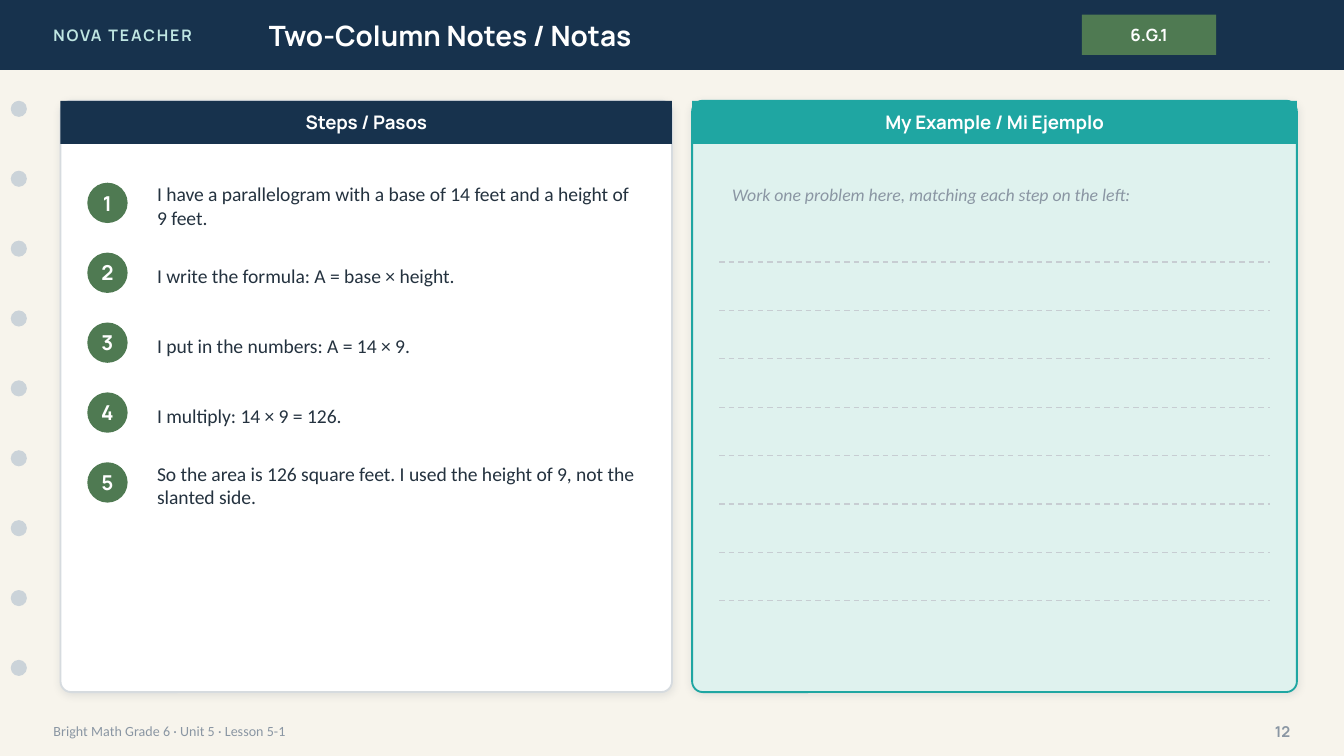
"""Build a two-column notes slide with worked steps and a space for an example."""
from lxml.etree import SubElement
from pptx import Presentation
from pptx.dml.color import RGBColor
from pptx.enum.dml import MSO_LINE_DASH_STYLE as Dash
from pptx.enum.shapes import MSO_CONNECTOR as Connector, MSO_SHAPE as Shape
from pptx.enum.text import MSO_ANCHOR as Anchor, MSO_AUTO_SIZE as AutoSize, PP_ALIGN as Align
from pptx.oxml.ns import qn
from pptx.util import Pt

CREAM = RGBColor(0xF7, 0xF4, 0xEC)
NAVY = RGBColor(0x17, 0x32, 0x4D)
MINT = RGBColor(0xBF, 0xE6, 0xE2)
WHITE = RGBColor(0xFF, 0xFF, 0xFF)
GREEN = RGBColor(0x4F, 0x7A, 0x52)
HOLE = RGBColor(0xCB, 0xD3, 0xD9)
GRAY = RGBColor(0x8A, 0x96, 0xA3)
INK = RGBColor(0x24, 0x32, 0x3F)
BORDER = RGBColor(0xD6, 0xDB, 0xDF)
TEAL = RGBColor(0x1F, 0xA6, 0xA2)
PALE_TEAL = RGBColor(0xDF, 0xF2, 0xEE)
RULE = RGBColor(0xC7, 0xCD, 0xD2)
SHADOW = RGBColor(0x1C, 0x2E, 0x42)

HEADING, BODY = "Manrope", "Calibri"
BAR_HEIGHT = 37.44
ROW_PITCH = 37.44
RULE_PITCH = 25.92
CARD_TOP, CARD_HEIGHT, HEADER_HEIGHT = 54, 316.8, 23.04
STEPS = (
    "I have a parallelogram with a base of 14 feet and a height of 9 feet.",
    "I write the formula: A = base × height.",
    "I put in the numbers: A = 14 × 9.",
    "I multiply: 14 × 9 = 126.",
    "So the area is 126 square feet. I used the height of 9, not the slanted side.",
)


def write(box, text, size, color, name=HEADING, bold=False, italic=False,
          align=Align.LEFT, spacing=0):
    """Put formatted text, centred vertically, into a shape."""
    frame = box.text_frame
    frame.word_wrap = True
    frame.auto_size = AutoSize.NONE
    frame.vertical_anchor = Anchor.MIDDLE
    para = frame.paragraphs[0]
    para.alignment = align
    span = para.add_run()
    span.text = text
    font = span.font
    font.name, font.size, font.bold, font.italic = name, Pt(size), bold, italic
    font.color.rgb = color
    if spacing:
        box.element.find(f".//{qn('a:rPr')}").set("spc", str(spacing * 100))


class NotesPage:
    """Hold the current slide and draw its elements in one style."""

    def __init__(self, deck):
        self.page = deck.slides.add_slide(deck.slide_layouts[5])
        self.page.background.fill.solid()
        self.page.background.fill.fore_color.rgb = CREAM

    def shape(self, kind, left, top, width, height, fill, line=None):
        shape = self.page.shapes.add_shape(kind, Pt(left), Pt(top), Pt(width), Pt(height))
        shape.shadow.inherit = False
        shape.fill.solid()
        shape.fill.fore_color.rgb = fill
        if line is None:
            shape.line.fill.background()
        else:
            shape.line.color.rgb = line
            shape.line.width = Pt(1)
        return shape

    def text(self, left, top, width, height, text, **style):
        box = self.page.shapes.add_textbox(Pt(left), Pt(top), Pt(width), Pt(height))
        write(box, text, **style)

    def title(self, left, top, width, height, text, **style):
        title = self.page.shapes.title
        title.left, title.top, title.width, title.height = map(Pt, (left, top, width, height))
        write(title, text, **style)
        return title

    def label(self, left, top, width, height, fill, text, size):
        label = self.shape(Shape.RECTANGLE, left, top, width, height, fill)
        write(label, text, size=size, color=WHITE, bold=True, align=Align.CENTER)

    def card(self, left, width, fill, line, header_fill, header):
        card = self.shape(Shape.ROUNDED_RECTANGLE, left, CARD_TOP, width, CARD_HEIGHT, fill, line)
        card.adjustments[0] = 0.018
        effects = card.element.spPr.find(qn("a:effectLst"))
        shadow = SubElement(effects, qn("a:outerShdw"), blurRad=str(Pt(4)), dist=str(Pt(1)),
                            dir="5400000", algn="bl", rotWithShape="0")
        color = SubElement(shadow, qn("a:srgbClr"), val=str(SHADOW))
        SubElement(color, qn("a:alpha"), val="10000")
        self.label(left, CARD_TOP, width, HEADER_HEIGHT, header_fill, header, 10)

    def step(self, number, text):
        top = 93.6 + (number - 1) * ROW_PITCH
        badge = self.shape(Shape.OVAL, 46.8, top + 4.32, 21.6, 21.6, GREEN)
        write(badge, str(number), size=11, color=WHITE, bold=True, align=Align.CENTER)
        frame = badge.text_frame
        frame.margin_left = frame.margin_right = frame.margin_top = frame.margin_bottom = 0
        self.text(77.04, top, 272.16, 33.12, text, size=10.5, color=INK, name=BODY)

    def writing_line(self, left, right, top):
        rule = self.page.shapes.add_connector(
            Connector.STRAIGHT, Pt(left), Pt(top), Pt(right), Pt(top))
        rule.line.color.rgb = RULE
        rule.line.width = Pt(0.75)
        rule.line.dash_style = Dash.DASH
        SubElement(rule.element.spPr, qn("a:effectLst"))


def main():
    deck = Presentation()
    deck.slide_width, deck.slide_height = Pt(720), Pt(405)
    notes = NotesPage(deck)

    bar = notes.shape(Shape.RECTANGLE, 0, 0, 720, BAR_HEIGHT, NAVY)
    title = notes.title(136.8, 0, 403.2, BAR_HEIGHT, "Two-Column Notes / Notas",
                        size=15, color=WHITE, bold=True)
    title.element.addprevious(bar.element)
    notes.text(21.6, 0, 172.8, BAR_HEIGHT, "NOVA TEACHER",
               size=8.5, color=MINT, bold=True, spacing=1)
    notes.label(579.6, 7.92, 72, 21.6, GREEN, "6.G.1", 9)

    for row in range(9):
        notes.shape(Shape.OVAL, 5.76, 54 + row * ROW_PITCH, 8.64, 8.64, HOLE)

    notes.text(21.6, 381.6, 504, 20.16, "Bright Math Grade 6 · Unit 5 · Lesson 5-1",
               size=7.5, color=GRAY, name=BODY)
    notes.text(662.4, 381.6, 36, 20.16, "12", size=8, color=GRAY, bold=True, align=Align.RIGHT)

    notes.card(32.4, 327.6, WHITE, BORDER, NAVY, "Steps / Pasos")
    for number, step in enumerate(STEPS, 1):
        notes.step(number, step)

    notes.card(370.8, 324, PALE_TEAL, TEAL, TEAL, "My Example / Mi Ejemplo")
    notes.text(385.2, 90, 295.2, 28.8, "Work one problem here, matching each step on the left:",
               size=9.5, color=GRAY, name=BODY, italic=True)
    for row in range(8):
        notes.writing_line(385.2, 680.4, 140.4 + row * RULE_PITCH)

    deck.save("out.pptx")


if __name__ == "__main__":
    main()
